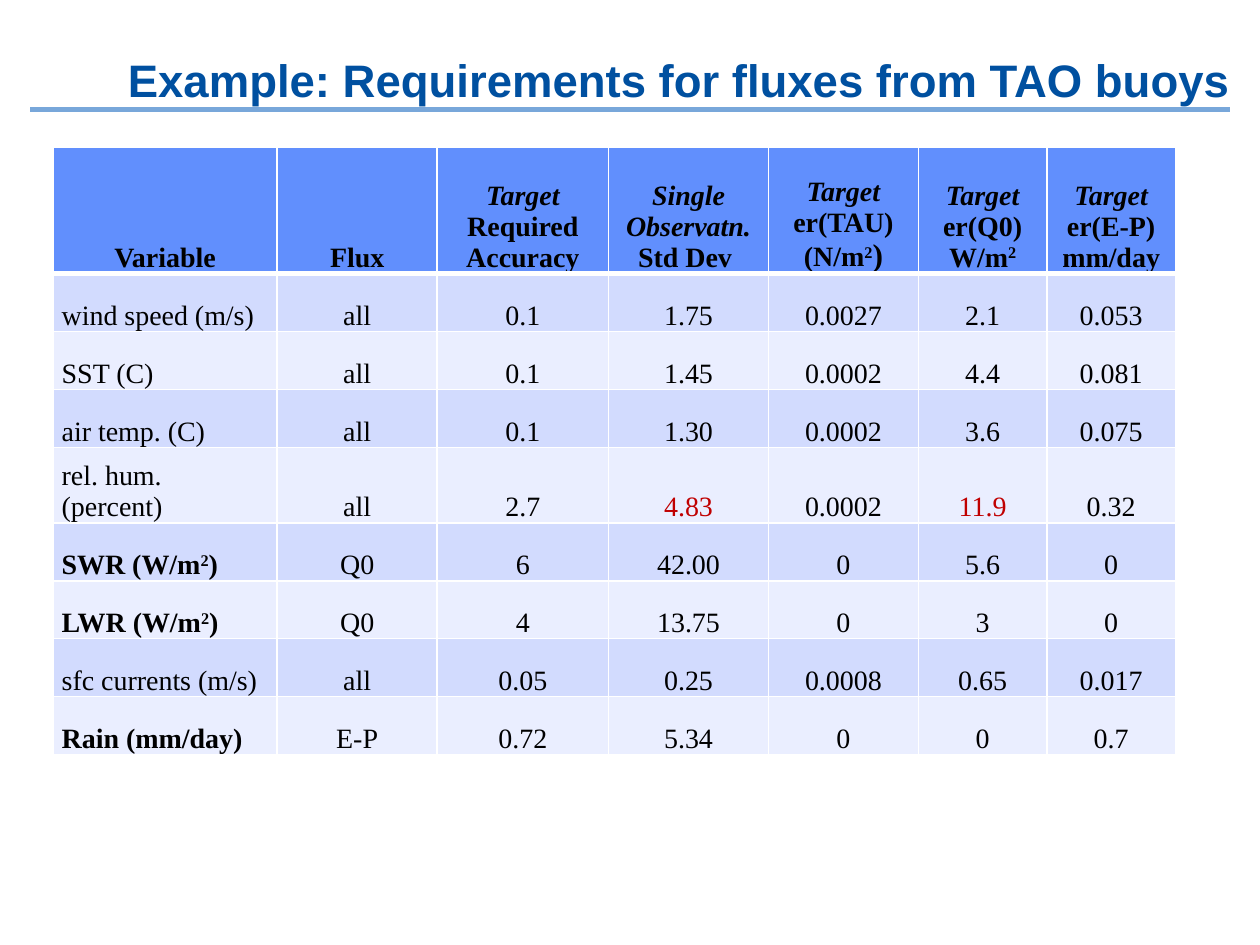
from lxml import etree
from pptx import Presentation
from pptx.dml.color import RGBColor
from pptx.enum.shapes import MSO_CONNECTOR
from pptx.enum.text import MSO_ANCHOR, PP_ALIGN
from pptx.oxml.ns import qn
from pptx.util import Inches, Pt

STRAIGHT = MSO_CONNECTOR.STRAIGHT
MIDDLE, BOTTOM = MSO_ANCHOR.MIDDLE, MSO_ANCHOR.BOTTOM
LEFT, CENTER, RIGHT = PP_ALIGN.LEFT, PP_ALIGN.CENTER, PP_ALIGN.RIGHT

WHITE, HEADER_FILL, BANDS = "FFFFFF", "618FFD", ("D2DBFE", "EAEEFF")
TITLE_FONT = {"name": "Arial", "size": Pt(26), "bold": True, "color": "0050A0"}
BODY_FONT = {"name": "Times New Roman", "size": Pt(16), "bold": False, "color": "000000"}
HEAD_FONT = {**BODY_FONT, "bold": True}
ITALIC, RED, LARGE = {"italic": True}, {"color": "C00000"}, {"size": Pt(18)}
SUPER = {"baseline": "30000"}

COLUMNS = (1.78, 1.27, 1.36, 1.27, 1.19, 1.02, 1.02)
HEADER_HEIGHT, ROW_HEIGHT, TALL_HEIGHT = 1, 0.46, 0.6
TARGET = [("Target", ITALIC)]
HEADERS = [
    [[("Variable", {})]],
    [[("Flux", {})]],
    [TARGET, [("Required\nAccuracy", {})]],
    [[("Single Observatn.", ITALIC)], [("Std Dev ", {})]],
    [TARGET, [("er(TAU)", {})], [("(N/m", {}), ("2", SUPER), (")", LARGE)]],
    [TARGET, [("er(Q0) W/m", {}), ("2", SUPER)]],
    [TARGET, [("er(E-P) mm/day", {})]],
]
ROWS = [
    ("wind speed (m/s)", "all", "0.1", "1.75", "0.0027", "2.1", "0.053"),
    ("SST (C)", "all", "0.1", "1.45", "0.0002", "4.4", "0.081"),
    ("air temp. (C)", "all", "0.1", "1.30", "0.0002", "3.6", "0.075"),
    ("rel. hum. (percent)", "all", "2.7", "4.83", "0.0002", "11.9", "0.32"),
    ("SWR (W/m^2^)", "Q0", "6", "42.00", "0", "5.6", "0"),
    ("LWR (W/m^2^)", "Q0", "4", "13.75", "0", "3", "0"),
    ("sfc currents (m/s)", "all", "0.05", "0.25", "0.0008", "0.65", "0.017"),
    ("Rain (mm/day)", "E-P", "0.72", "5.34", "0", "0", "0.7"),
]
BOLD_LABELS = ("SWR", "LWR", "Rain")
HIGHLIGHTS = ("4.83", "11.9")


def rgb(value):
    """Return the colour for a hex string."""
    return RGBColor.from_string(value)


def add_run(p, text, fmt):
    """Add one run with the given format values."""
    r = p.add_run()
    r.text = text
    for key, value in fmt.items():
        if key == "color":
            r.font.color.rgb = rgb(value)
        elif key == "baseline":
            r.font._element.set("baseline", value)
        else:
            setattr(r.font, key, value)


def add_text(tf, paragraphs, base, align):
    """Fill a text frame with paragraphs of (text, format) runs."""
    for i, runs in enumerate(paragraphs):
        p = tf.paragraphs[0] if i == 0 else tf.add_paragraph()
        p.alignment = align
        for text, fmt in runs:
            for n, line in enumerate(text.split("\n")):
                if n:
                    p.add_line_break()
                    size = str(int(base["size"].pt * 100))
                    etree.SubElement(p._p[-1], qn("a:rPr"), sz=size)
                add_run(p, line, {**base, **fmt})


def set_borders(cell, top, bottom):
    """Draw white borders round a cell, with widths in points."""
    tcPr = cell._tc.get_or_add_tcPr()
    for side, width in (("L", 1), ("R", 1), ("T", top), ("B", bottom)):
        ln = etree.SubElement(tcPr, qn(f"a:ln{side}"), w=str(Pt(width)))
        fill = etree.SubElement(ln, qn("a:solidFill"))
        etree.SubElement(fill, qn("a:srgbClr"), val=WHITE)


def add_cell(cell, paragraphs, base, align, fill, top=1, bottom=1):
    """Format one table cell and write its text."""
    set_borders(cell, top, bottom)
    cell.fill.solid()
    cell.fill.fore_color.rgb = rgb(fill)
    layout = {"vertical_anchor": BOTTOM, "margin_left": Inches(0.07),
              "margin_right": Inches(0.07), "margin_top": 0, "margin_bottom": 0}
    for key, value in layout.items():
        setattr(cell, key, value)
    add_text(cell.text_frame, paragraphs, base, align)


def add_title(s, x, y, w, h, text):
    """Place the right-aligned title and the rule under it."""
    rule_y = Inches(y + 0.87)
    line = s.shapes.add_connector(STRAIGHT, Inches(x - 0.18), rule_y,
                                  Inches(x + w - 0.01), rule_y)
    line.line.color.rgb = rgb("78A7DA")
    line.line.width = Pt(3)
    etree.SubElement(line._element.spPr, qn("a:effectLst"))
    tf = s.shapes.add_textbox(Inches(x), Inches(y), Inches(w), Inches(h)).text_frame
    layout = {"word_wrap": True, "vertical_anchor": MIDDLE, "margin_left": 0,
              "margin_right": 0, "margin_top": Inches(0.05), "margin_bottom": Inches(0.05)}
    for key, value in layout.items():
        setattr(tf, key, value)
    add_text(tf, [[(text, {})]], TITLE_FONT, RIGHT)


def add_requirements(s, x, y, w, h):
    """Place the table of flux requirements."""
    table = s.shapes.add_table(len(ROWS) + 1, len(COLUMNS), Inches(x), Inches(y),
                               Inches(w), Inches(h)).table
    for column, width in zip(table.columns, COLUMNS):
        column.width = Inches(width)
    table.rows[0].height = Inches(HEADER_HEIGHT)
    for c, paragraphs in enumerate(HEADERS):
        add_cell(table.cell(0, c), paragraphs, HEAD_FONT, CENTER, HEADER_FILL, bottom=3)
    for i, (label, *values) in enumerate(ROWS):
        row, fill, top = i + 1, BANDS[i % 2], 1 if i else 3
        tall = label.startswith("rel. hum.")
        table.rows[row].height = Inches(TALL_HEIGHT if tall else ROW_HEIGHT)
        base = HEAD_FONT if label.startswith(BOLD_LABELS) else BODY_FONT
        runs = [(part, SUPER if n % 2 else {}) for n, part in enumerate(label.split("^"))]
        add_cell(table.cell(row, 0), [runs], base, LEFT, fill, top)
        for c, value in enumerate(values, 1):
            fmt = RED if value in HIGHLIGHTS else {}
            add_cell(table.cell(row, c), [[(value, fmt)]], BODY_FONT, CENTER, fill, top)


def main():
    """Build and save the slide."""
    prs = Presentation()
    prs.slide_width, prs.slide_height = Inches(10), Inches(7.5)
    s = prs.slides.add_slide(prs.slide_layouts[6])
    add_title(s, 0.42, 0, 9.35, 1.26, "Example: Requirements for fluxes from TAO buoys")
    add_requirements(s, 0.42, 1.17, 8.92, 4.8)
    prs.save("out.pptx")


if __name__ == "__main__":
    main()
